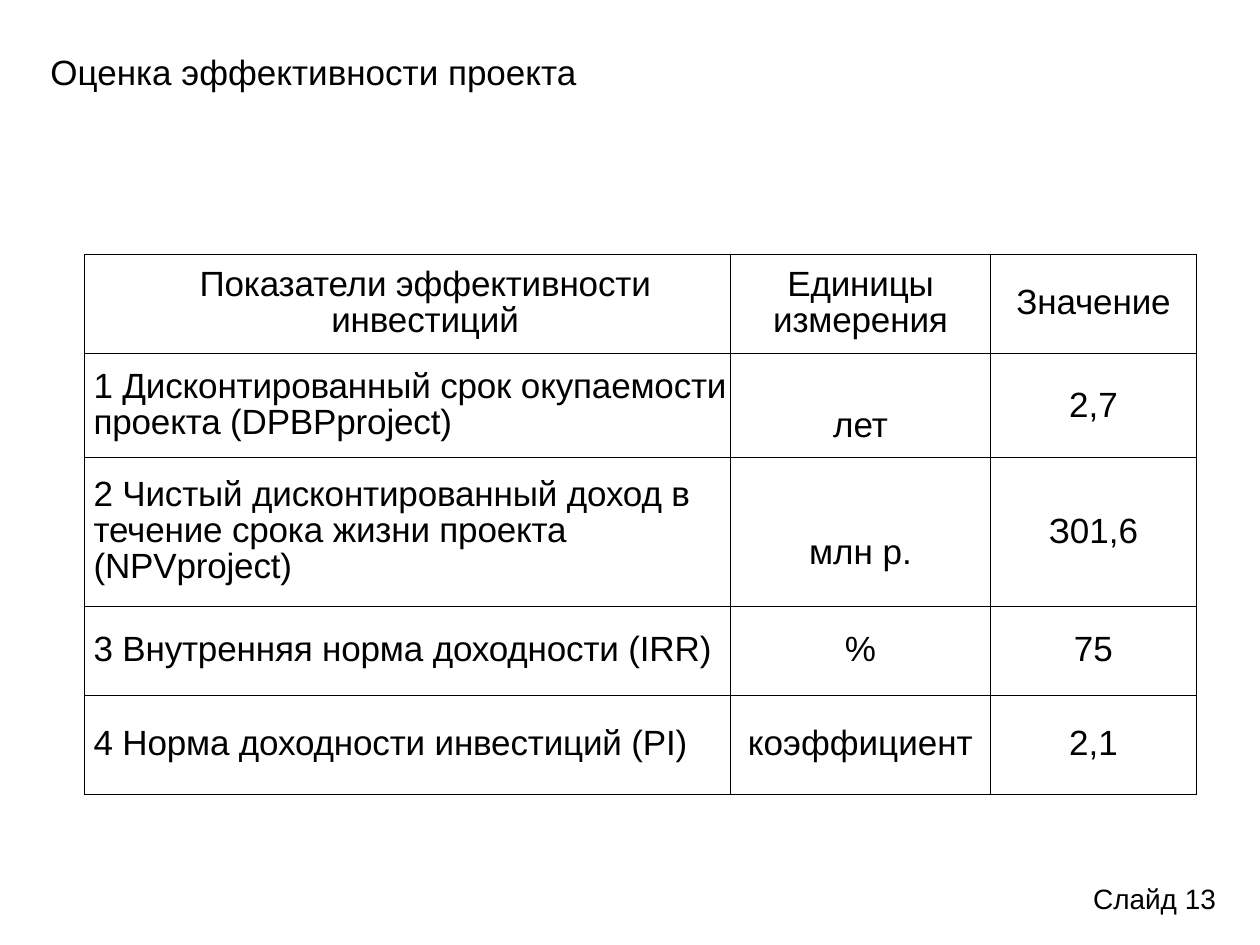
from dataclasses import dataclass

from lxml import etree
from pptx import Presentation
from pptx.dml.color import RGBColor
from pptx.enum import text
from pptx.oxml.ns import qn
from pptx.util import Pt

ALIGN = text.PP_ALIGN


@dataclass(frozen=True)
class Theme:
    font: str = "Arial"
    ink: str = "000000"
    body: float = 20
    footer: float = 16
    leading: float = 20.6
    tracking: float = -0.1
    border: float = 0.5


class SlideBuilder:
    def __init__(self, page, theme):
        self.page = page
        self.theme = theme

    def style(self, para, size, align):
        para.alignment = align
        para.font.name = self.theme.font
        para.font.size = Pt(size)
        para.font.color.rgb = RGBColor.from_string(self.theme.ink)

    def text_box(self, words, frame, size, align=ALIGN.LEFT,
                 anchor=text.MSO_ANCHOR.TOP, margins=(7.2, 3.6, 7.2, 3.6)):
        box = self.page.shapes.add_textbox(*map(Pt, frame)).text_frame
        box.word_wrap = True
        box.vertical_anchor = anchor
        (box.margin_left, box.margin_top,
         box.margin_right, box.margin_bottom) = map(Pt, margins)
        box.text = words
        self.style(box.paragraphs[0], size, align)

    def table(self, left, top, widths, heights):
        frame = self.page.shapes.add_table(
            len(heights), len(widths), Pt(left), Pt(top),
            Pt(sum(widths)), Pt(sum(heights)))
        grid = frame.table
        grid.first_row = grid.horz_banding = False
        for column, width in zip(grid.columns, widths):
            column.width = Pt(width)
        for row, height in zip(grid.rows, heights):
            row.height = Pt(height)
        return grid

    def cell(self, cell, words, align=ALIGN.CENTER, left=0, top=0,
             exact=True, tight=False):
        cell.margin_left, cell.margin_top = Pt(left), Pt(top)
        cell.margin_right = cell.margin_bottom = 0
        cell.vertical_anchor = text.MSO_ANCHOR.MIDDLE
        cell.text = words
        para = cell.text_frame.paragraphs[0]
        self.style(para, self.theme.body, align)
        if exact:
            para.line_spacing = Pt(self.theme.leading)
        if tight:
            props = para.runs[0]._r.get_or_add_rPr()
            props.set("spc", str(round(self.theme.tracking * 100)))
        self.borders(cell)
        cell.fill.background()

    def borders(self, cell):
        props = cell._tc.get_or_add_tcPr()
        for side in ("lnL", "lnR", "lnT", "lnB"):
            line = etree.SubElement(props, qn(f"a:{side}"),
                                    w=str(Pt(self.theme.border)))
            fill = etree.SubElement(line, qn("a:solidFill"))
            etree.SubElement(fill, qn("a:srgbClr"), val=self.theme.ink)


HEADERS = ("Показатели эффективности инвестиций", "Единицы измерения", "Значение")
# Indicator, unit, value, whether the unit sits one line lower
INDICATORS = (
    ("1 Дисконтированный срок окупаемости проекта (DPBPproject)",
     "лет", "2,7", True),
    ("2 Чистый дисконтированный доход в течение срока жизни проекта (NPVproject)",
     "млн р.", "З01,6", True),
    ("3 Внутренняя норма доходности (IRR)", "%", "75", False),
    ("4 Норма доходности инвестиций (PI)", "коэффициент", "2,1", False),
)


def main():
    deck = Presentation()
    deck.slide_width, deck.slide_height = Pt(720), Pt(540)
    theme = Theme()
    builder = SlideBuilder(deck.slides.add_slide(deck.slide_layouts[6]), theme)

    # Title and slide number
    builder.text_box("Оценка эффективности проекта", (14.4, 19.4, 656, 43.2),
                     theme.body, anchor=text.MSO_ANCHOR.MIDDLE,
                     margins=(14.4, 2.2, 2.2, 2.2))
    builder.text_box("Слайд 13", (601.9, 500.4, 100, 28), theme.footer, ALIGN.RIGHT)

    # Table header
    grid = builder.table(48.2, 145.4, (369.4, 148.3, 118),
                         (56.6, 59.4, 85, 51, 56.6))
    for column, header in enumerate(HEADERS):
        builder.cell(grid.cell(0, column), header,
                     left=20 if column == 0 else 0, tight=True)

    # Indicator rows
    for row, (label, unit, value, lowered) in enumerate(INDICATORS, start=1):
        builder.cell(grid.cell(row, 0), label, ALIGN.LEFT, left=5.3, tight=True)
        builder.cell(grid.cell(row, 1), unit, top=23 if lowered else 0,
                     exact=not lowered)
        builder.cell(grid.cell(row, 2), value, exact=not lowered)

    deck.save("out.pptx")


if __name__ == "__main__":
    main()
